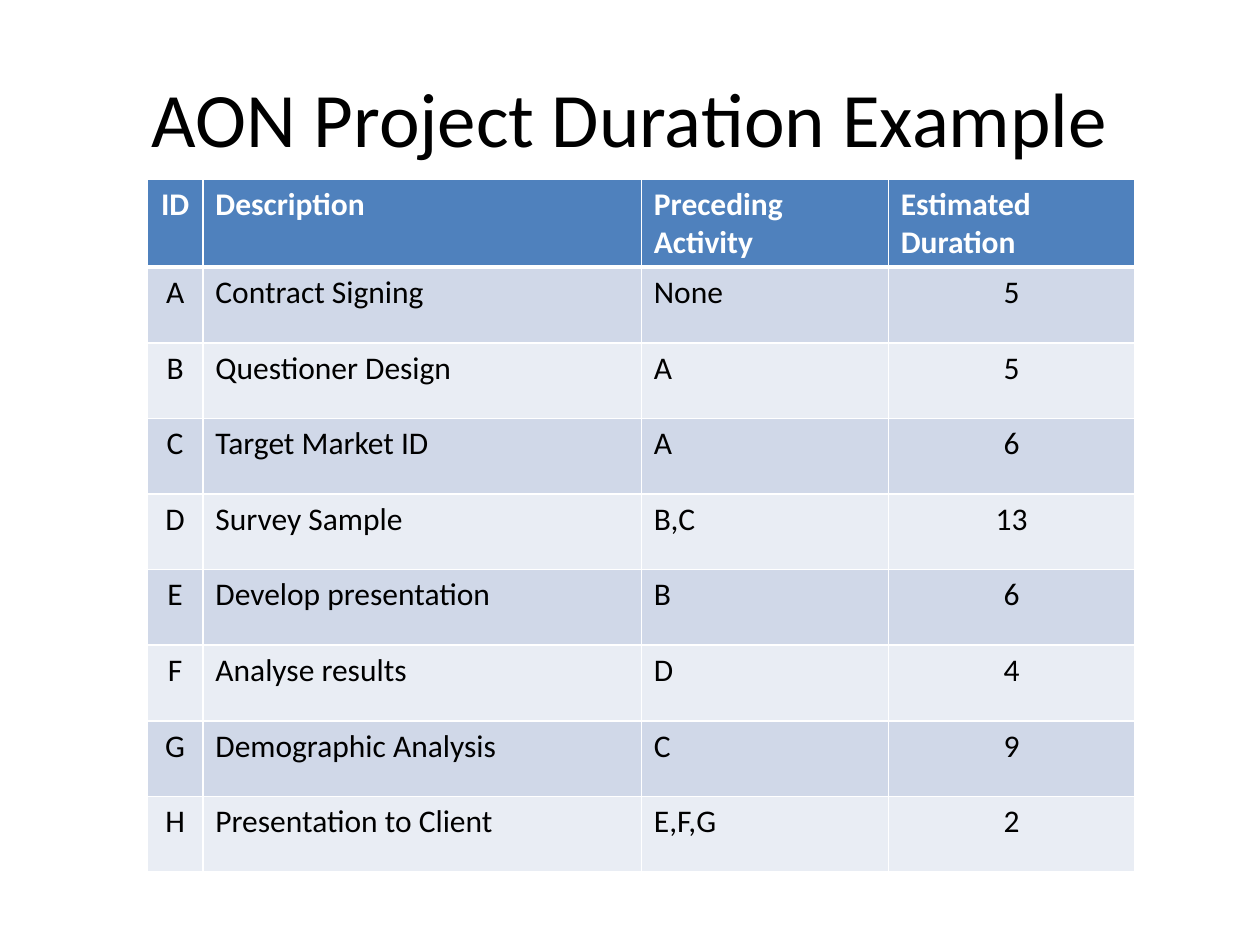
"""Build the AON project duration slide with its activity table."""
from dataclasses import dataclass

from lxml.etree import SubElement
from pptx import Presentation
from pptx.dml.color import RGBColor
from pptx.enum.text import MSO_ANCHOR, PP_ALIGN
from pptx.oxml.ns import qn
from pptx.util import Inches, Pt


@dataclass(frozen=True)
class Theme:
    font: str = "Calibri"
    title_size: int = 44
    table_size: int = 18
    ink: str = "000000"
    header_ink: str = "FFFFFF"
    header_fill: str = "4F81BD"
    bands: tuple = ("D0D8E8", "E9EDF4")
    rule: str = "FFFFFF"
    thin: int = 1
    thick: int = 3


class SlideBuilder:
    def __init__(self, slide, theme):
        self.slide = slide
        self.theme = theme

    def set_text(self, frame, text, size, color, align, bold=False):
        frame.text = text
        formats = {"name": self.theme.font, "size": Pt(size), "bold": bold}
        for paragraph in frame.paragraphs:
            paragraph.alignment = align
            for name, value in formats.items():
                setattr(paragraph.font, name, value)
            paragraph.font.color.rgb = RGBColor.from_string(color)

    def title(self, text, left, top, width, height):
        heading = self.slide.shapes.add_textbox(
            Inches(left), Inches(top), Inches(width), Inches(height)).text_frame
        heading.word_wrap = True
        heading.vertical_anchor = MSO_ANCHOR.MIDDLE
        self.set_text(heading, text, self.theme.title_size, self.theme.ink, PP_ALIGN.CENTER)

    def borders(self, cell, top, bottom):
        properties = cell._tc.get_or_add_tcPr()
        widths = {"L": self.theme.thin, "R": self.theme.thin, "T": top, "B": bottom}
        for side, width in widths.items():
            line = SubElement(properties, qn(f"a:ln{side}"), w=str(Pt(width)))
            SubElement(SubElement(line, qn("a:solidFill")), qn("a:srgbClr"), val=self.theme.rule)

    def cell(self, cell, text, row, align):
        theme = self.theme
        header = row == 0
        self.borders(cell, theme.thick if row == 1 else theme.thin,
                     theme.thick if header else theme.thin)
        fill = theme.header_fill if header else theme.bands[(row - 1) % 2]
        cell.fill.solid()
        cell.fill.fore_color.rgb = RGBColor.from_string(fill)
        self.set_text(cell.text_frame, text, theme.table_size,
                      theme.header_ink if header else theme.ink, align, header)

    def table(self, records, left, top, column_widths, header_height, row_height, centered):
        heights = [header_height] + [row_height] * (len(records) - 1)
        grid = self.slide.shapes.add_table(
            len(records), len(column_widths), Inches(left), Inches(top),
            Inches(sum(column_widths)), Inches(sum(heights))).table
        for column, width in zip(grid.columns, column_widths):
            column.width = Inches(width)
        for row, (record, height) in enumerate(zip(records, heights)):
            grid.rows[row].height = Inches(height)
            for column, text in enumerate(record):
                middle = column == 0 or (row > 0 and column in centered)
                align = PP_ALIGN.CENTER if middle else PP_ALIGN.LEFT
                self.cell(grid.cell(row, column), text, row, align)


ACTIVITIES = [
    ("ID", "Description", "Preceding Activity", "Estimated\nDuration"),
    ("A", "Contract Signing", "None", "5"),
    ("B", "Questioner Design", "A", "5"),
    ("C", "Target Market ID", "A", "6"),
    ("D", "Survey Sample", "B,C", "13"),
    ("E", "Develop presentation", "B", "6"),
    ("F", "Analyse results", "D", "4"),
    ("G", "Demographic Analysis", "C", "9"),
    ("H", "Presentation to Client", "E,F,G", "2"),
]


def main():
    deck = Presentation()
    deck.slide_width, deck.slide_height = Inches(10), Inches(7.5)
    builder = SlideBuilder(deck.slides.add_slide(deck.slide_layouts[6]), Theme())
    builder.title("AON Project Duration Example", 0.5, 0.3, 9, 1.25)
    builder.table(ACTIVITIES, 1.17, 1.42, (0.44, 3.48, 1.96, 1.96), 0.7, 0.6, centered=(3,))
    deck.save("out.pptx")


if __name__ == "__main__":
    main()
